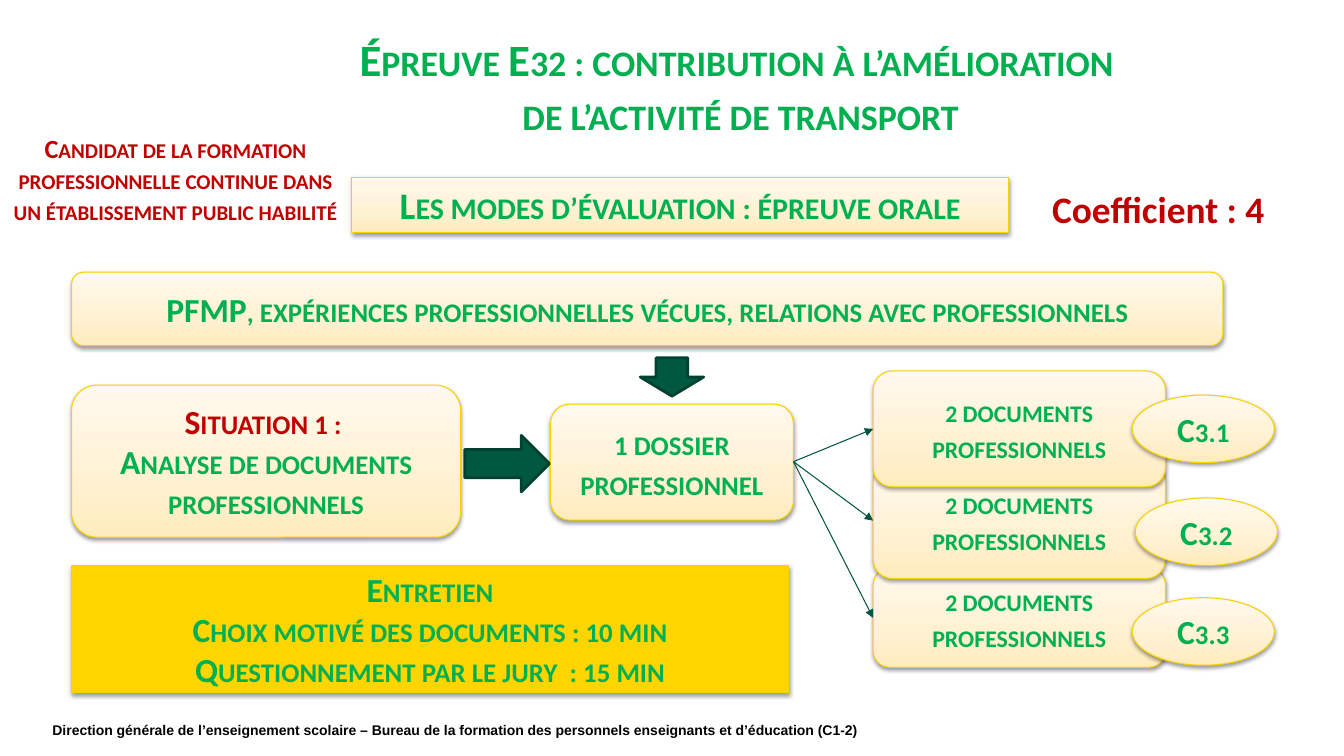
from copy import deepcopy

from lxml import etree
from pptx import Presentation, util as u
from pptx.dml.color import RGBColor
from pptx.enum import shapes, text
from pptx.oxml import ns

COLORS = {
    "green": "00B050", "red": "C00000", "black": "000000",
    "cream_dark": "FFEBBD", "cream": "FFF1D1", "cream_light": "FFF9EE",
    "yellow": "FFD500", "gold": "F9D000",
    "arrow": "005841", "arrow_edge": "004130", "link": "005640",
}
CREAM_STOPS = [(0, "cream_dark"), (0.35, "cream"), (1, "cream_light")]
SHAPE = shapes.MSO_SHAPE
TOP, MIDDLE = text.MSO_ANCHOR.TOP, text.MSO_ANCHOR.MIDDLE


def rgb(name):
    return RGBColor.from_string(COLORS[name])


def inches(*values):
    return [u.Inches(v) for v in values]


def write(sp, lines, size=24, color="green", font="Calibri", caps=True,
          align=text.PP_ALIGN.CENTER, anchor=MIDDLE, inset=None):
    """Fill a shape with paragraphs; a line is a string or (string, color)."""
    tf = sp.text_frame
    tf.word_wrap = True
    tf.vertical_anchor = anchor
    if inset is not None:
        tf.margin_left = tf.margin_right = u.Inches(inset)
        tf.margin_top = tf.margin_bottom = u.Inches(inset)
    for i, line in enumerate(lines):
        words, line_color = line if isinstance(line, tuple) else (line, color)
        p = tf.paragraphs[0] if i == 0 else tf.add_paragraph()
        p.alignment = align
        r = p.add_run()
        r.text = words
        r.font.name, r.font.size, r.font.bold = font, u.Pt(size), True
        r.font.color.rgb = rgb(line_color)
        if caps:
            r.font._element.set("cap", "small")


def add_text(s, at, lines, **fmt):
    write(s.shapes.add_textbox(*inches(*at)), lines, **fmt)


def add_solid(s, kind, at, fill, edge, width):
    sp = s.shapes.add_shape(kind, *inches(*at))
    sp.shadow.inherit = False
    sp.fill.solid()
    sp.fill.fore_color.rgb = rgb(fill)
    sp.line.color.rgb = rgb(edge)
    sp.line.width = u.Pt(width)
    return sp


def add_shadow(sp):
    effects = sp._element.spPr.find(ns.qn("a:effectLst"))
    shadow = etree.SubElement(effects, ns.qn("a:outerShdw"), blurRad=str(u.Pt(3.1)),
                              dist=str(u.Pt(1.6)), dir="5400000", rotWithShape="0")
    tint = etree.SubElement(shadow, ns.qn("a:srgbClr"), val=COLORS["black"])
    etree.SubElement(tint, ns.qn("a:alpha"), val="38000")


def add_cream_fill(sp):
    sp.fill.gradient()
    sp.fill.gradient_angle = 90
    stops = sp._element.spPr.find(".//" + ns.qn("a:gsLst"))
    stops.insert(1, deepcopy(stops[0]))
    for stop, (position, color) in zip(sp.fill.gradient_stops, CREAM_STOPS):
        stop.position = position
        stop.color.rgb = rgb(color)


def add_box(s, kind, at, lines, cream=True, **fmt):
    sp = add_solid(s, kind, at, "yellow", "gold", 0.75)
    if cream:
        add_cream_fill(sp)
    add_shadow(sp)
    write(sp, lines, **fmt)


def add_link(s, start, end):
    link = s.shapes.add_connector(shapes.MSO_CONNECTOR.STRAIGHT, *inches(*start, *end))
    link.line.color.rgb = rgb("link")
    link.line.width = u.Pt(0.75)
    spPr = link._element.spPr
    etree.SubElement(spPr.find(ns.qn("a:ln")), ns.qn("a:tailEnd"), type="triangle")
    etree.SubElement(spPr, ns.qn("a:effectLst"))


def main():
    prs = Presentation()
    prs.slide_width, prs.slide_height = inches(13.33, 7.5)
    s = prs.slides.add_slide(prs.slide_layouts[6])

    # Header
    add_text(s, (1.52, 0.27, 11.65, 1.18),
             ["Épreuve E32 : contribution à l’amélioration ", "de l’activité de transport"],
             size=32, anchor=TOP)
    add_box(s, SHAPE.RECTANGLE, (3.49, 1.76, 6.51, 0.55),
            ["Les modes d’évaluation : épreuve orale"], size=26.7, anchor=TOP)
    add_text(s, (9.79, 1.8, 3.4, 0.55), ["Coefficient : 4"],
             size=26.7, color="red", caps=False, anchor=TOP)
    add_text(s, (0.03, 1.26, 3.42, 1.36),
             ["Candidat de la formation professionnelle continue dans "
              "un établissement public habilité"],
             size=18.7, color="red", anchor=TOP)

    # Experience, situation and file
    add_box(s, SHAPE.ROUNDED_RECTANGLE, (0.71, 2.7, 11.42, 0.73),
            ["PFMP, expériences professionnelles vécues, relations avec professionnels"])
    add_box(s, SHAPE.ROUNDED_RECTANGLE, (0.71, 3.82, 3.86, 1.51),
            [("Situation 1 : ", "red"), "Analyse de documents professionnels"])
    add_box(s, SHAPE.ROUNDED_RECTANGLE, (5.46, 4.01, 2.41, 1.15),
            ["1 dossier professionnel"])

    # Document sets, stacked from the lowest up
    for top, height in [(5.64, 0.98), (4.59, 1.15), (3.68, 1.15)]:
        add_box(s, SHAPE.ROUNDED_RECTANGLE, (8.66, top, 2.9, height),
                ["2 documents professionnels"], size=21.3)
        add_link(s, (7.87, 4.58), (8.66, top + height / 2))

    # Skills
    for i, (left, top) in enumerate([(11.23, 3.92), (11.26, 4.94), (11.23, 5.93)], 1):
        add_box(s, SHAPE.OVAL, (left, top, 1.41, 0.67), [f"C3.{i}"])

    # Interview
    add_box(s, SHAPE.RECTANGLE, (0.71, 5.61, 7.11, 1.26),
            ["Entretien", "Choix motivé des documents : 10 min",
             "Questionnement par le jury  : 15 min"], cream=False)

    # Block arrows
    add_solid(s, SHAPE.RIGHT_ARROW, (4.61, 4.32, 0.84, 0.56), "arrow", "arrow_edge", 2)
    add_solid(s, SHAPE.DOWN_ARROW, (6.35, 3.55, 0.63, 0.38), "arrow", "arrow_edge", 2)

    # Footer
    add_text(s, (0.52, 6.98, 12.44, 0.52),
             ["Direction générale de l’enseignement scolaire – Bureau de la formation "
              "des personnels enseignants et d’éducation (C1-2)"],
             size=10, color="black", font="Arial", caps=False,
             align=text.PP_ALIGN.LEFT, inset=0)

    prs.save("out.pptx")


if __name__ == "__main__":
    main()
